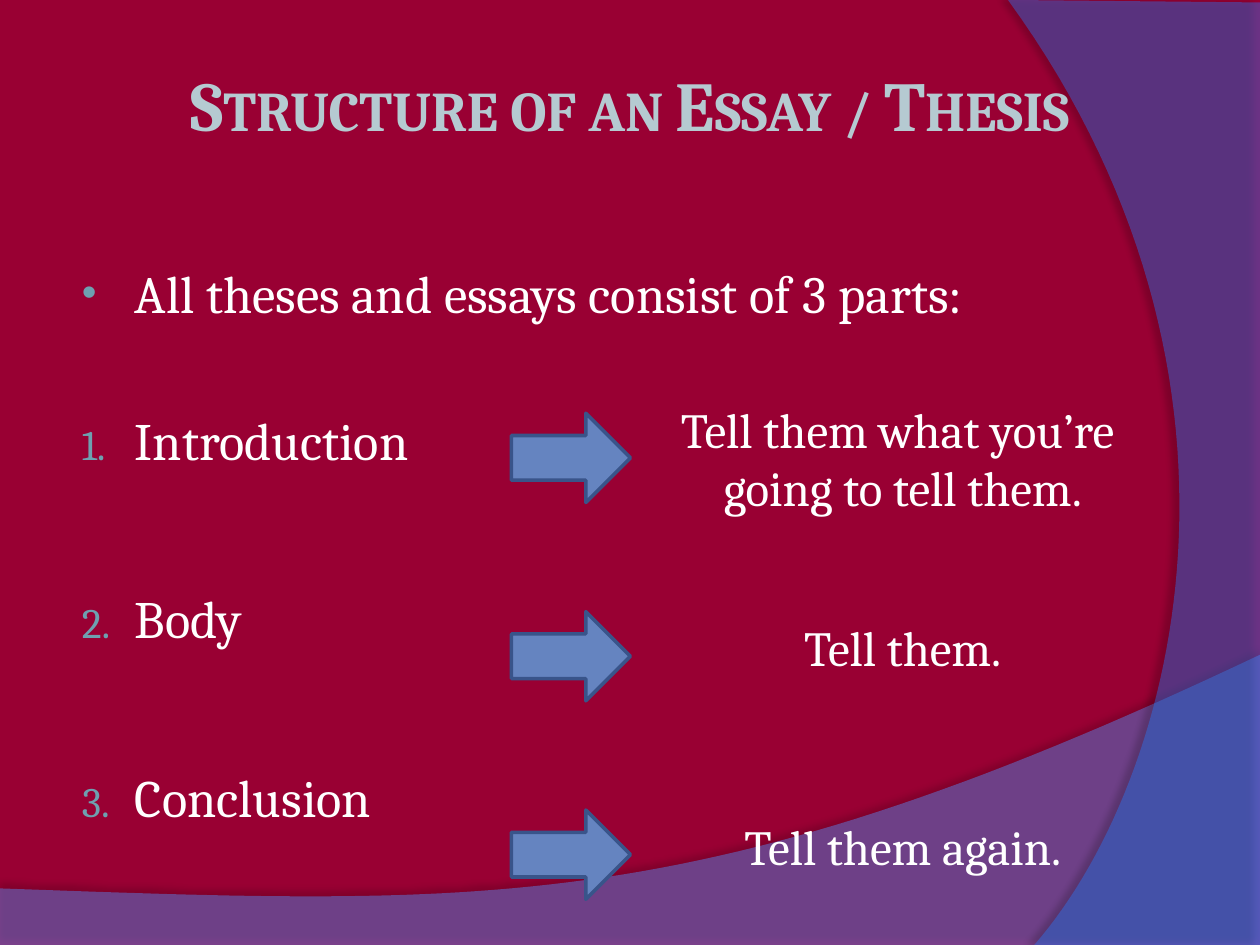
from dataclasses import dataclass

from lxml.etree import SubElement
from pptx import Presentation
from pptx.dml.color import RGBColor
from pptx.enum.shapes import MSO_SHAPE
from pptx.enum.text import PP_ALIGN
from pptx.oxml.ns import qn
from pptx.util import Cm, Pt

WINE = RGBColor(0x99, 0x00, 0x33)
SKY = RGBColor(0x57, 0x90, 0xF7)
BLUE = RGBColor(0x26, 0x7D, 0xFF)
STEEL = RGBColor(0x65, 0x84, 0xC0)
NAVY = RGBColor(0x39, 0x54, 0x8A)
TEAL = RGBColor(0x6E, 0xA0, 0xB0)
PALE = RGBColor(0xB5, 0xCA, 0xD1)
WHITE = RGBColor(0xFF, 0xFF, 0xFF)
BLACK = RGBColor(0, 0, 0)
FONT = "Cambria"

Point = tuple[float, float]


@dataclass
class Wave:
    edge: list[Point]
    curve: list[Point]
    color: RGBColor
    alpha: int
    shade: int
    drop: float
    angle: int


@dataclass
class Item:
    text: str
    gap: float
    mark: str


@dataclass
class Reply:
    lines: list[str]
    top: float
    height: float


WAVES = [
    Wave([(0, 17.91), (0, 19.07), (25.4, 19.07), (25.4, 13.2)],
         [(14.2, 18.52), (9.93, 18.26), (0, 17.91)], SKY, 45, 35, 3.5, 270),
    Wave([(25.4, 0.05), (25.4, 19.05), (20.85, 19.05)],
         [(23.75, 15.72), (25.86, 7.62), (20.32, 0)], BLUE, 40, 45, 4, 180),
]
ITEMS = [
    Item("All theses and essays consist of 3 parts:", 0, "dot"),
    Item("Introduction", 48, "number"),
    Item("Body", 66, "number"),
    Item("Conclusion", 66, "number"),
]
REPLIES = [
    Reply(["Tell them what you’re ", "going to tell them."], 7.92, 2.62),
    Reply(["Tell them."], 12.32, 1.45),
    Reply(["Tell them again."], 16.33, 1.45),
]


def bend(start: Point, curve: list[Point], steps: int = 60) -> list[Point]:
    def at(t: float) -> Point:
        u = 1 - t
        parts = (u**3, 3 * u * u * t, 3 * u * t * t, t**3)
        nodes = [start, *curve]
        return (sum(w * n[0] for w, n in zip(parts, nodes)),
                sum(w * n[1] for w, n in zip(parts, nodes)))

    return [at(i / steps) for i in range(1, steps + 1)]


def set_alpha(color, value: int) -> None:
    SubElement(color, qn("a:alpha"), val=str(value * 1000))


def add_wave(slide, wave: Wave) -> None:
    points = [(Cm(x), Cm(y)) for x, y in wave.edge + bend(wave.edge[-1], wave.curve)]
    pen = slide.shapes.build_freeform(*points[0])
    pen.add_line_segments(points[1:], close=True)
    shape = pen.convert_to_shape()
    shape.fill.solid()
    shape.fill.fore_color.rgb = wave.color
    shape.line.fill.background()
    shape.shadow.inherit = False
    props = shape._element.spPr
    set_alpha(props.find(qn("a:solidFill"))[0], wave.alpha)
    shade = SubElement(props.find(qn("a:effectLst")), qn("a:outerShdw"),
                       blurRad=str(Pt(4)), dist=str(Pt(wave.drop)),
                       dir=str(wave.angle * 60000), rotWithShape="0")
    set_alpha(SubElement(shade, qn("a:srgbClr"), val=str(BLACK)), wave.shade)


def style(para, text: str, size: int, color: RGBColor = WHITE) -> None:
    para.text = text
    para.font.name = FONT
    para.font.size = Pt(size)
    para.font.color.rgb = color


def add_box(slide, left: float, top: float, width: float, height: float):
    frame = slide.shapes.add_textbox(Cm(left), Cm(top), Cm(width), Cm(height)).text_frame
    frame.word_wrap = True
    return frame


def add_lines(frame, lines: list[str], size: int, color: RGBColor = WHITE) -> None:
    for i, line in enumerate(lines):
        para = frame.add_paragraph() if i else frame.paragraphs[0]
        style(para, line, size, color)
        para.alignment = PP_ALIGN.CENTER


def set_mark(para, mark: str) -> None:
    props = para._p.get_or_add_pPr()
    props.set("marL", str(Cm(1.17)))
    props.set("indent", str(Cm(-1.07)))
    nodes = [("buClr", {}), ("buSzPct", {"val": "80000"})]
    if mark == "dot":
        nodes += [("buFont", {"typeface": "Arial"}), ("buChar", {"char": "•"})]
    else:
        nodes += [("buFont", {"typeface": FONT}), ("buAutoNum", {"type": "arabicPeriod"})]
    spot = props.find(qn("a:defRPr"))
    for name, attrs in nodes:
        node = SubElement(props, qn(f"a:{name}"), **attrs)
        if name == "buClr":
            SubElement(node, qn("a:srgbClr"), val=str(TEAL))
        if spot is not None:
            spot.addprevious(node)


def add_list(slide, items: list[Item]) -> None:
    frame = add_box(slide, 1.3, 5.13, 22.86, 15.32)
    for i, item in enumerate(items):
        para = frame.add_paragraph() if i else frame.paragraphs[0]
        style(para, item.text, 30)
        para.space_before = Pt(item.gap)
        set_mark(para, item.mark)


def add_arrow(slide, top: float) -> None:
    arrow = slide.shapes.add_shape(MSO_SHAPE.RIGHT_ARROW, Cm(10.31), Cm(top), Cm(2.4), Cm(1.8))
    arrow.shadow.inherit = False
    arrow.fill.solid()
    arrow.fill.fore_color.rgb = STEEL
    arrow.line.color.rgb = NAVY
    arrow.line.width = Pt(2)


def add_title(slide, text: str) -> None:
    frame = add_box(slide, 0, 1.12, 25.4, 1.96)
    add_lines(frame, [text], 40, PALE)
    para = frame.paragraphs[0]
    para.font.bold = True
    para.runs[0].font._element.set("cap", "small")


def main() -> None:
    deck = Presentation()
    deck.slide_width, deck.slide_height = Cm(25.4), Cm(19.05)
    slide = deck.slides.add_slide(deck.slide_layouts[6])
    slide.background.fill.solid()
    slide.background.fill.fore_color.rgb = WINE
    for wave in WAVES:
        add_wave(slide, wave)
    add_list(slide, ITEMS)
    for reply in REPLIES:
        add_lines(add_box(slide, 11, reply.top, 14.4, reply.height), reply.lines, 28)
    for i in range(len(REPLIES)):
        add_arrow(slide, 8.33 + 4 * i)
    add_title(slide, "Structure of an Essay / Thesis")
    deck.save("out.pptx")


if __name__ == "__main__":
    main()
